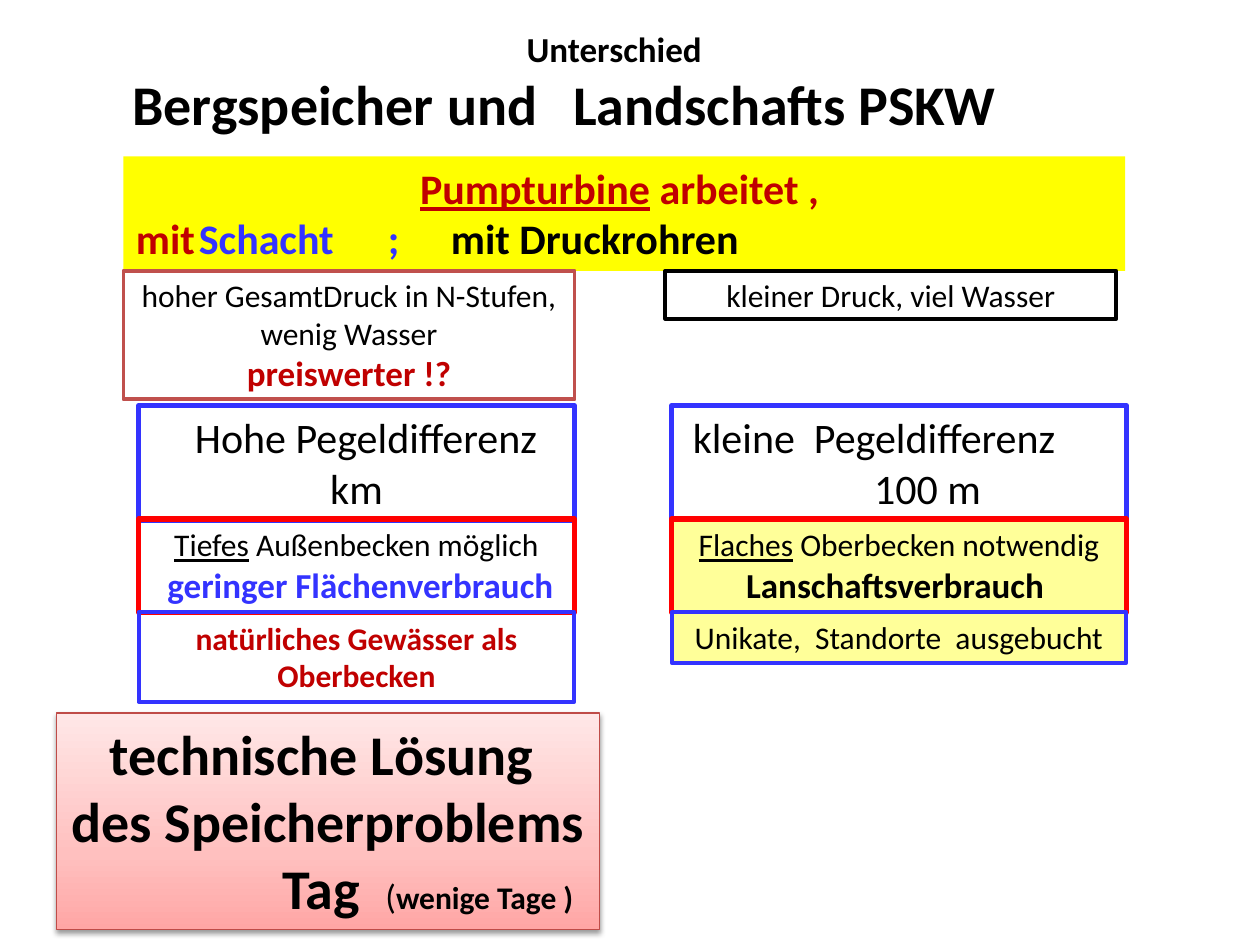
import copy
from dataclasses import dataclass

import lxml.etree
import pptx
import pptx.dml.color
import pptx.enum.shapes
import pptx.enum.text
import pptx.oxml.ns
import pptx.util

RGBColor = pptx.dml.color.RGBColor
BLACK = RGBColor(0x00, 0x00, 0x00)
BLUE = RGBColor(0x33, 0x33, 0xFF)
RED = RGBColor(0xFF, 0x00, 0x00)
DARK_RED = RGBColor(0xC0, 0x00, 0x00)
BRICK = RGBColor(0xC0, 0x50, 0x4D)
SOLUTION_LINE = RGBColor(0xBF, 0x4C, 0x48)
YELLOW = RGBColor(0xFF, 0xFF, 0x00)
PALE_YELLOW = RGBColor(0xFF, 0xFF, 0x99)
SOLUTION_STOPS = (
    (0, RGBColor(0xFF, 0xA6, 0xA5)),
    (0.35, RGBColor(0xFF, 0xC0, 0xBF)),
    (1, RGBColor(0xFF, 0xE7, 0xE7)),
)

FONT = "Calibri"
SLIDE_WIDTH = pptx.util.Inches(10)
SLIDE_HEIGHT = pptx.util.Inches(7.5)
COLUMNS, ROWS = 100, 75
LEFT = pptx.enum.text.PP_ALIGN.LEFT
CENTER = pptx.enum.text.PP_ALIGN.CENTER


@dataclass(frozen=True)
class Span:
    text: str
    size: float = 18
    color: RGBColor = BLACK
    bold: bool = False
    underline: bool = False


@dataclass(frozen=True)
class Line:
    spans: tuple[Span, ...]
    alignment: pptx.enum.text.PP_ALIGN = CENTER
    indent: float = 0
    tabs: tuple[float, ...] = ()


@dataclass(frozen=True)
class Box:
    column: float
    row: float
    width: float
    height: float
    lines: tuple[Line, ...]
    fill: RGBColor | None = None
    border: RGBColor | None = None
    border_width: float = 2.25
    inset: float = 1
    inset_rows: float = 0.5


def across(columns: float) -> int:
    return round(SLIDE_WIDTH * columns / COLUMNS)


def down(rows: float) -> int:
    return round(SLIDE_HEIGHT * rows / ROWS)


def write_text(paragraph, text: str, *, size: float, color: RGBColor,
               bold: bool, underline: bool) -> None:
    run = paragraph.add_run()
    run.text = text
    font = run.font
    font.name, font.size = FONT, pptx.util.Pt(size)
    font.bold, font.underline = bold, underline
    font.color.rgb = color


def fill_frame(shape, box: Box) -> None:
    frame = shape.text_frame
    frame.word_wrap = True
    frame.auto_size = pptx.enum.text.MSO_AUTO_SIZE.NONE
    frame.vertical_anchor = pptx.enum.text.MSO_ANCHOR.TOP
    frame.margin_left = frame.margin_right = across(box.inset)
    frame.margin_top = frame.margin_bottom = down(box.inset_rows)
    for index, line in enumerate(box.lines):
        paragraph = frame.add_paragraph() if index else frame.paragraphs[0]
        paragraph.alignment = line.alignment
        paragraph.space_before = pptx.util.Pt(0)
        properties = paragraph._p.get_or_add_pPr()
        properties.set("marL", str(across(line.indent)))
        properties.set("indent", "0")
        if line.tabs:
            stops = lxml.etree.SubElement(properties, pptx.oxml.ns.qn("a:tabLst"))
            for position in line.tabs:
                lxml.etree.SubElement(stops, pptx.oxml.ns.qn("a:tab"),
                                      pos=str(across(position)), algn="l")
        for span in line.spans:
            write_text(paragraph, span.text, size=span.size, color=span.color,
                       bold=span.bold, underline=span.underline)


def add_title(slide, box: Box) -> None:
    title = slide.shapes.title
    title.left, title.top = across(box.column), down(box.row)
    title.width, title.height = across(box.width), down(box.height)
    fill_frame(title, box)


def add_box(slide, box: Box):
    shape = slide.shapes.add_shape(
        pptx.enum.shapes.MSO_SHAPE.RECTANGLE,
        across(box.column), down(box.row), across(box.width), down(box.height))
    shape.shadow.inherit = False
    if box.fill is None:
        shape.fill.background()
    else:
        shape.fill.solid()
        shape.fill.fore_color.rgb = box.fill
    if box.border is None:
        shape.line.fill.background()
    else:
        shape.line.color.rgb = box.border
        shape.line.width = pptx.util.Pt(box.border_width)
    fill_frame(shape, box)
    return shape


def add_gradient_and_shadow(shape) -> None:
    qn = pptx.oxml.ns.qn
    shape.fill.gradient()
    shape.fill.gradient_angle = 90
    stop_list = shape._element.spPr.find(".//" + qn("a:gsLst"))
    stop_list.insert(1, copy.deepcopy(stop_list[0]))
    for stop, (position, color) in zip(shape.fill.gradient_stops, SOLUTION_STOPS):
        stop.position = position
        stop.color.rgb = color
    effects = shape._element.spPr.find(qn("a:effectLst"))
    shadow = lxml.etree.SubElement(
        effects, qn("a:outerShdw"), blurRad=str(pptx.util.Pt(3.1)),
        dist=str(pptx.util.Pt(1.6)), dir="5400000", rotWithShape="0")
    color = lxml.etree.SubElement(shadow, qn("a:srgbClr"), val=str(BLACK))
    lxml.etree.SubElement(color, qn("a:alpha"), val="38000")


TITLE = Box(4.5, 1.7, 88.5, 9.8, (
    Line((Span("Unterschied", 20, bold=True),)),
    Line((Span("\tBergspeicher\tund\tLandschafts PSKW", 32, bold=True),),
         LEFT, tabs=(8.4, 37.3, 49.5)),
))
SOLUTION = Box(4.5, 56.6, 43.1, 17.2, (
    Line((Span("technische Lösung ", 32, bold=True),)),
    Line((Span("des Speicherproblems", 32, bold=True),)),
    Line((Span("Tag  ", 32, bold=True), Span("(", 20),
          Span("wenige Tage )", bold=True)), LEFT, indent=17.4),
), border=SOLUTION_LINE, border_width=0.75, inset=0.5)

MOUNTAIN = {"column": 11, "width": 34.6}
LANDSCAPE = {"column": 53.3, "width": 36.1}
LEVEL = {"row": 32.2, "height": 9.1, "border": BLUE, "border_width": 3}
BASIN = {"row": 41.2, "height": 7.4, "border": RED, "border_width": 3}
SITE = {"row": 48.6, "border": BLUE}
PRESSURE = {"row": 21.5, "width": 35.8, "inset": 0.4, "inset_rows": 0.4}

BOXES = (
    Box(**MOUNTAIN, **LEVEL, lines=(
        Line((Span("Hohe Pegeldifferenz", 24),), indent=1.5),
        Line((Span("km", 24),)))),
    Box(**MOUNTAIN, **BASIN, lines=(
        Line((Span("Tiefes", underline=True), Span(" Außenbecken möglich"))),
        Line((Span(" geringer Flächenverbrauch", 20, BLUE, True),)))),
    Box(**MOUNTAIN, **SITE, height=7.1, lines=(
        Line((Span("natürliches Gewässer als Oberbecken", 18, DARK_RED, True),)),)),
    Box(**LANDSCAPE, **LEVEL, lines=(
        Line((Span("kleine  Pegeldifferenz", 24),), LEFT, indent=0.7),
        Line((Span("100 m", 24),), LEFT, indent=15.1))),
    Box(**LANDSCAPE, **BASIN, fill=PALE_YELLOW, lines=(
        Line((Span("Flaches", underline=True), Span(" Oberbecken notwendig"))),
        Line((Span("Lanschaftsverbrauch ", 20, bold=True),)))),
    Box(**LANDSCAPE, **SITE, height=4, fill=PALE_YELLOW, lines=(
        Line((Span("Unikate,  Standorte  ausgebucht"),)),)),
    Box(9.8, 12.4, 79.5, 9.1, (
        Line((Span("Pumpturbine", 24, DARK_RED, True, True),
              Span(" arbeitet , ", 24, DARK_RED, True))),
        Line((Span("mit\t", 24, DARK_RED, True), Span("Schacht\t;\t", 24, BLUE, True),
              Span("mit Druckrohren", 24, bold=True)), LEFT, tabs=(8.5, 36.6, 42.8)),
    ), fill=YELLOW),
    Box(9.8, **PRESSURE, height=10.2, border=BRICK, lines=(
        Line((Span("hoher GesamtDruck in N-Stufen, wenig Wasser"),)),
        Line((Span("preiswerter !?", 20, DARK_RED, True),)))),
    Box(52.8, **PRESSURE, height=3.8, border=BLACK, lines=(
        Line((Span("kleiner Druck, viel Wasser"),)),)),
)


def main() -> None:
    presentation = pptx.Presentation()
    presentation.slide_width, presentation.slide_height = SLIDE_WIDTH, SLIDE_HEIGHT
    slide = presentation.slides.add_slide(presentation.slide_layouts[5])
    add_title(slide, TITLE)
    for box in BOXES:
        add_box(slide, box)
    add_gradient_and_shadow(add_box(slide, SOLUTION))
    presentation.save("out.pptx")


if __name__ == "__main__":
    main()
